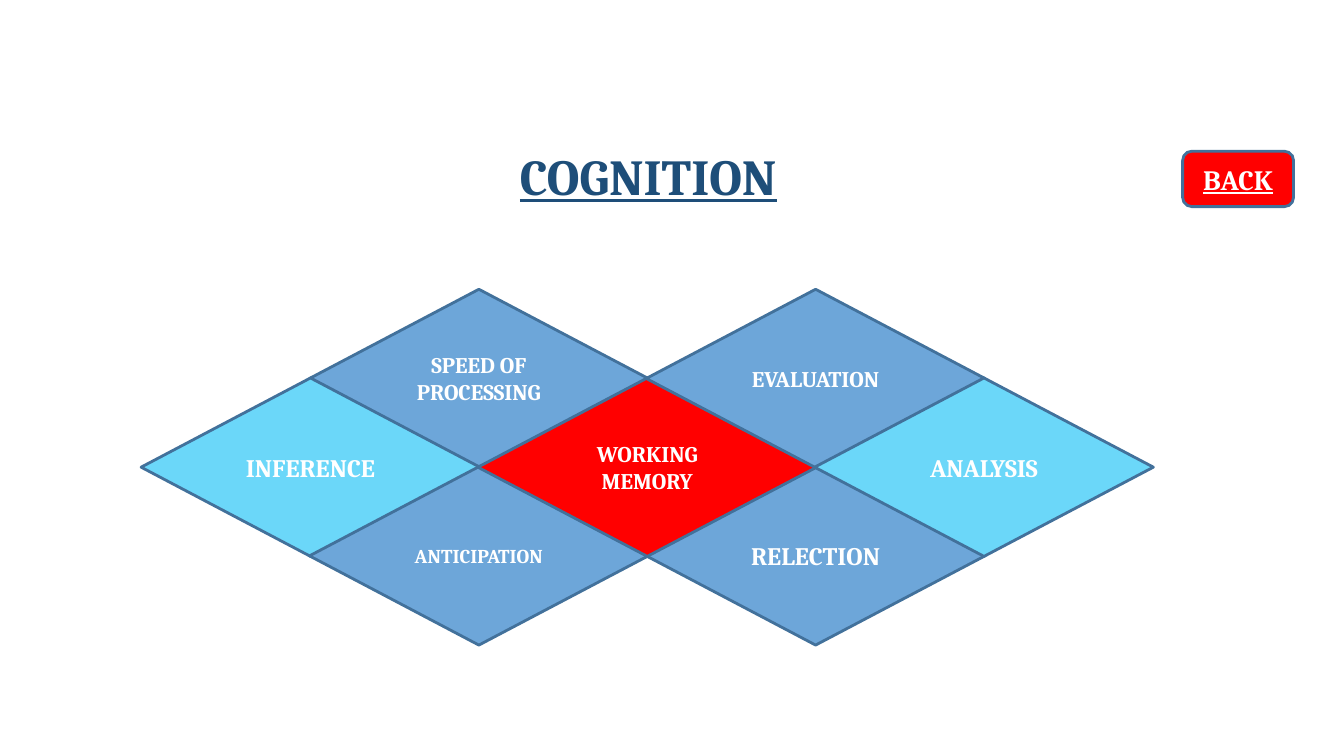
from pptx import Presentation
from pptx.dml.color import RGBColor
from pptx.enum import shapes, text
from pptx import util as u

NAVY = RGBColor(0x1E, 0x4E, 0x79)
BLUE = RGBColor(0x6D, 0xA6, 0xD9)
SKY = RGBColor(0x6B, 0xD7, 0xF9)
RED = RGBColor(0xFF, 0x00, 0x00)
EDGE = RGBColor(0x42, 0x71, 0x9B)
WHITE = RGBColor(0xFF, 0xFF, 0xFF)
FONT = "Cambria"

# Diamond lattice, in inches: neighbours sit half a diamond apart
LEFT, TOP = 1.4, 2.87
COLUMN, ROW = 1.67, 0.88
DIAMOND_SIZE = (3.36, 1.77)

# Label, column, row, fill, text size; from back to front
SKILLS = [
    ("SPEED OF PROCESSING", 1, 0, BLUE, 16),
    ("INFERENCE", 0, 1, SKY, 18),
    ("ANTICIPATION", 1, 2, BLUE, 14),
    ("RELECTION", 3, 2, BLUE, 18),
    ("WORKING MEMORY", 2, 1, RED, 16),
    ("EVALUATION", 3, 0, BLUE, 16),
    ("ANALYSIS", 4, 1, SKY, 18),
]


def write(frame, label, size, color, underline=False):
    """Put one centred bold line of text in a frame."""
    frame.word_wrap = True
    frame.auto_size = text.MSO_AUTO_SIZE.NONE
    frame.vertical_anchor = text.MSO_ANCHOR.MIDDLE
    paragraph = frame.paragraphs[0]
    paragraph.text = label
    paragraph.alignment = text.PP_ALIGN.CENTER
    font = paragraph.font
    font.name, font.size, font.bold = FONT, u.Pt(size), True
    font.underline = underline
    font.color.rgb = color


def add_title(slide, label):
    title = slide.shapes.title
    title.left, title.top, title.width, title.height = map(
        u.Inches, (0.34, 1.42, 12.18, 0.71))
    write(title.text_frame, label, 36, NAVY, underline=True)
    title.text_frame.paragraphs[0].line_spacing = 0.9


def add_block(slide, kind, box, fill, label, size, underline=False):
    block = slide.shapes.add_shape(kind, *map(u.Inches, box))
    block.shadow.inherit = False
    block.fill.solid()
    block.fill.fore_color.rgb = fill
    block.line.color.rgb = EDGE
    block.line.width = u.Pt(2)
    write(block.text_frame, label, size, WHITE, underline)


def add_skill(slide, label, column, row, fill, size):
    box = (LEFT + column * COLUMN, TOP + row * ROW, *DIAMOND_SIZE)
    add_block(slide, shapes.MSO_SHAPE.FLOWCHART_DECISION, box, fill, label, size)


def main():
    deck = Presentation()
    deck.slide_width, deck.slide_height = u.Inches(13.33), u.Inches(7.5)
    slide = deck.slides.add_slide(deck.slide_layouts.get_by_name("Title Only"))

    add_title(slide, "COGNITION")

    # Lattice of cognitive skills
    for skill in SKILLS:
        add_skill(slide, *skill)

    # Back button
    add_block(slide, shapes.MSO_SHAPE.ROUNDED_RECTANGLE, (11.73, 1.5, 1.1, 0.55),
              RED, "BACK", 20, underline=True)

    deck.save("out.pptx")


if __name__ == "__main__":
    main()
